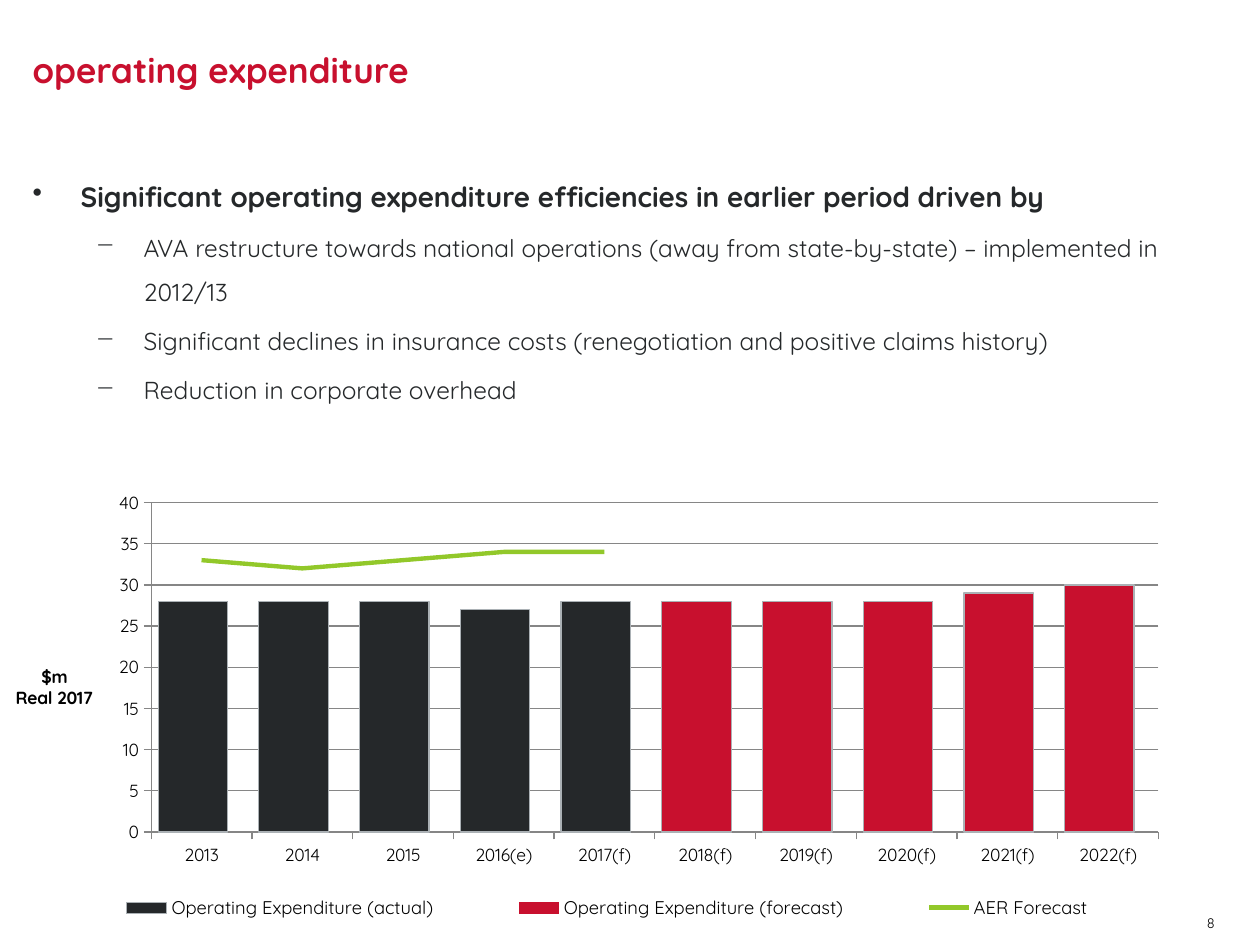
"""Build the operating expenditure slide."""
from lxml import etree
from pptx import Presentation
from pptx.chart.data import CategoryChartData
from pptx.dml.color import RGBColor
from pptx.enum.chart import XL_CHART_TYPE, XL_LEGEND_POSITION, XL_MARKER_STYLE, XL_TICK_MARK
from pptx.enum.text import MSO_ANCHOR
from pptx.oxml import parse_xml
from pptx.oxml.ns import nsdecls, qn
from pptx.util import Inches, Pt

COLUMNS = XL_CHART_TYPE.COLUMN_CLUSTERED
BOTTOM_LEGEND = XL_LEGEND_POSITION.BOTTOM
NO_MARKER = XL_MARKER_STYLE.NONE
TICK_OUT = XL_TICK_MARK.OUTSIDE
TOP, BOTTOM = MSO_ANCHOR.TOP, MSO_ANCHOR.BOTTOM

FONT = "Quicksand"
INK, RED, GREEN = "25282A", "C8102E", "92C82A"
BLACK, WHITE, GREY, SILVER = "000000", "FFFFFF", "868686", "ABB1B5"

BULLETS = [
    (0, "Significant operating expenditure efficiencies in earlier period driven by"),
    (1, "AVA restructure towards national operations (away from state-by-state) – implemented in 2012/13"),
    (1, "Significant declines in insurance costs (renegotiation and positive claims history)"),
    (1, "Reduction in corporate overhead"),
]
LEVELS = [
    {"mark": "•", "indent": 0.38, "size": 16, "bold": True},
    {"mark": "−", "indent": 0.88, "size": 14, "bold": False},
]
YEARS = ["2013", "2014", "2015", "2016(e)", "2017(f)",
         "2018(f)", "2019(f)", "2020(f)", "2021(f)", "2022(f)"]
FIRST_FORECAST = 5
EXPENDITURE = [28, 28, 28, 27, 28, 28, 28, 28, 29, 30]
AER_FORECAST = [33, 32, 33, 34, 34] + [None] * 5


def colour(value):
    """Turn a hex string into a colour."""
    return RGBColor.from_string(value)


def set_font(font, size, shade, bold=False):
    """Apply the slide's typeface with a size, colour and weight."""
    for name, value in {"name": FONT, "size": Pt(size), "bold": bold}.items():
        setattr(font, name, value)
    font.color.rgb = colour(shade)


def set_line(line, shade, width=0.75):
    """Colour a line and set its width."""
    line.color.rgb = colour(shade)
    line.width = Pt(width)


def set_fill(fill, shade):
    """Fill with one solid colour."""
    fill.solid()
    fill.fore_color.rgb = colour(shade)


def place(element, index, **fractions):
    """Give a chart part a manual layout in fractions of the chart."""
    for old in element.findall(qn("c:layout")):
        element.remove(old)
    layout = etree.Element(qn("c:layout"))
    manual = etree.SubElement(layout, qn("c:manualLayout"))
    settings = {"xMode": "edge", "yMode": "edge", **fractions}
    for name, value in settings.items():
        etree.SubElement(manual, qn(f"c:{name}")).set("val", str(value))
    element.insert(index, layout)


def move_to_line_plot(chart, series):
    """Draw one series of a column chart as a line on the same axes."""
    bars = chart.plots[0]._element
    lines = parse_xml(
        f'<c:lineChart {nsdecls("c")}><c:grouping val="standard"/>'
        '<c:varyColors val="0"/><c:marker val="1"/></c:lineChart>')
    element = series._element
    for invert in element.findall(qn("c:invertIfNegative")):
        element.remove(invert)
    lines.insert(2, element)
    for axis_id in bars.findall(qn("c:axId")):
        etree.SubElement(lines, qn("c:axId")).set("val", axis_id.get("val"))
    bars.addnext(lines)
    return chart.plots[1].series[0]


class SlideBuilder:
    """Holds the slide and adds its elements in one style."""

    def __init__(self, slide):
        """Keep the current slide."""
        self.slide = slide

    def text_box(self, bounds, inset=0, anchor=TOP, wrap=True):
        """Add an empty text box."""
        box = self.slide.shapes.add_textbox(*map(Inches, bounds))
        frame = box.text_frame
        values = {"word_wrap": wrap, "vertical_anchor": anchor}
        for side in ("left", "top", "right", "bottom"):
            values[f"margin_{side}"] = Inches(inset)
        for name, value in values.items():
            setattr(frame, name, value)
        return box

    def label(self, text, bounds, size, shade, bold=False, fill=None, **options):
        """Add a single paragraph of text."""
        box = self.text_box(bounds, **options)
        if fill:
            set_fill(box.fill, fill)
        para = box.text_frame.paragraphs[0]
        para.text = text
        set_font(para.font, size, shade, bold)

    def bullets(self, items, bounds):
        """Add a two-level bulleted list."""
        frame = self.text_box(bounds).text_frame
        for number, (level, text) in enumerate(items):
            style = LEVELS[level]
            para = frame.add_paragraph() if number else frame.paragraphs[0]
            para.text = text
            para.level = level
            para.line_spacing = 1.5
            if number:
                para.space_before = Pt(style["size"] * 0.2)
            properties = para._p.get_or_add_pPr()
            properties.set("marL", str(Inches(style["indent"])))
            properties.set("indent", str(Inches(-0.38)))
            etree.SubElement(properties, qn("a:buChar")).set("char", style["mark"])
            set_font(para.font, style["size"], INK, style["bold"])

    def expenditure_chart(self, bounds):
        """Add the expenditure columns with the forecast line."""
        data = CategoryChartData()
        data.categories = YEARS
        data.add_series("Operating Expenditure (actual)", EXPENDITURE)
        data.add_series("Operating Expenditure (forecast)", [None] * len(YEARS))
        data.add_series("AER Forecast", AER_FORECAST)
        chart = self.slide.shapes.add_chart(COLUMNS, *map(Inches, bounds), data).chart
        chart.has_title = False
        set_font(chart.font, 10, BLACK)
        plot = chart.plots[0]
        for name, value in {"gap_width": 20, "overlap": 75, "vary_by_categories": False}.items():
            setattr(plot, name, value)

        actual, forecast, allowance = plot.series
        forecast_points = [actual.points[i] for i in range(FIRST_FORECAST, len(YEARS))]
        columns = [(actual, INK, SILVER), (forecast, RED, RED)]
        columns += [(point, RED, SILVER) for point in forecast_points]
        for item, fill, edge in columns:
            set_fill(item.format.fill, fill)
            set_line(item.format.line, edge)
        line = move_to_line_plot(chart, allowance)
        line.smooth = False
        line.marker.style = NO_MARKER
        set_line(line.format.line, GREEN, 2.5)

        self.axes(chart)
        chart.has_legend = True
        legend = chart.legend
        legend.position = BOTTOM_LEGEND
        legend.include_in_layout = False
        set_font(legend.font, 10.5, BLACK)
        place(legend._element, 1, x=0.04, y=0.88, w=0.94, h=0.08)
        plot_area = plot._element.getparent()
        place(plot_area, 0, layoutTarget="inner", x=0.127, y=0.051, w=0.846, h=0.707)
        target = plot_area.find(".//" + qn("c:layoutTarget"))
        target.getparent().insert(0, target)

    def axes(self, chart):
        """Style both axes and title the value axis."""
        for axis in (chart.category_axis, chart.value_axis):
            axis.major_tick_mark = TICK_OUT
            set_line(axis.format.line, GREY)
            set_font(axis.tick_labels.font, 10, BLACK)
        axis = chart.value_axis
        scale = {"minimum_scale": 0, "maximum_scale": 40, "major_unit": 5,
                 "has_major_gridlines": True, "has_title": True}
        for name, value in scale.items():
            setattr(axis, name, value)
        set_line(axis.major_gridlines.format.line, GREY)
        frame = axis.axis_title.text_frame
        frame.text = "$m\nReal 2017"
        for para in frame.paragraphs:
            set_font(para.font, 10, BLACK, True)
        body = frame._txBody.bodyPr
        body.set("rot", "0")
        body.set("vert", "horz")
        place(axis.axis_title._element, 1, x=0.01, y=0.39)


def main():
    """Create the deck and save it."""
    deck = Presentation()
    deck.slide_width, deck.slide_height = Inches(10), Inches(7.5)
    page = SlideBuilder(deck.slides.add_slide(deck.slide_layouts[6]))
    page.label("8", (9.48, 7.19, 0.34, 0.24), 8, BLACK, inset=0.1, wrap=False)
    page.bullets(BULLETS, (0.26, 1.29, 9.45, 5.71))
    page.label("operating expenditure", (0.26, 0.22, 7.51, 0.5), 20, RED,
               bold=True, fill=WHITE, anchor=BOTTOM)
    page.expenditure_chart((0, 3.8, 9.45, 3.7))
    deck.save("out.pptx")


if __name__ == "__main__":
    main()
